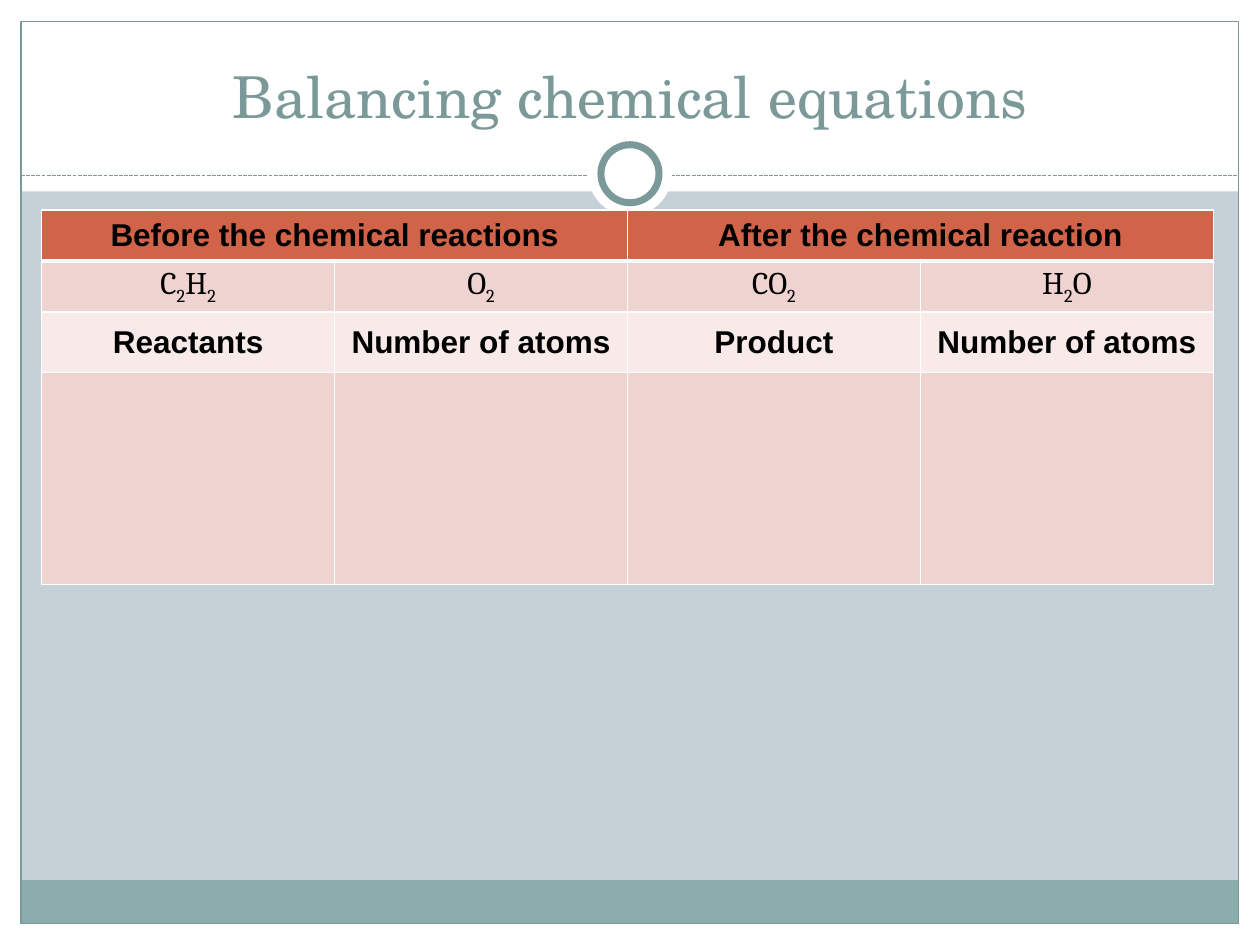
from lxml.etree import SubElement
from pptx import Presentation
from pptx.dml.color import RGBColor
from pptx.enum.dml import MSO_LINE as Dash
from pptx.enum.shapes import MSO_CONNECTOR as Conn, MSO_SHAPE as Shape
from pptx.enum.text import MSO_ANCHOR as Anchor, PP_ALIGN as Align
from pptx.oxml.ns import qn
from pptx.util import Pt

COLORS = {
    "back": "C5D1D7", "white": "FFFFFF", "black": "000000",
    "teal": "7C999A", "foot": "8CADAE",
    "head": "D16349", "pink": "EED3D0", "pale": "F7EAE9",
}
HEADS = ["Before the chemical reactions", "After the chemical reaction"]
MOLES = ["C2H2", "O2", "CO2", "H2O"]
LABELS = ["Reactants", "Number of atoms", "Product", "Number of atoms"]
HEIGHTS = [29.2, 29.2, 34.6, 121]
FILLS = ["head", "pink", "pale", "pink"]
COL = 167.4


def color(name):
    return RGBColor.from_string(COLORS[name])


def add_shape(slide, kind, box, fill=None, line=None, width=0.75):
    shape = slide.shapes.add_shape(kind, *map(Pt, box))
    shape.shadow.inherit = False
    if fill:
        shape.fill.solid()
        shape.fill.fore_color.rgb = color(fill)
    else:
        shape.fill.background()
    if line:
        shape.line.color.rgb = color(line)
        shape.line.width = Pt(width)
    else:
        shape.line.fill.background()


def add_rule(slide, left, right, top):
    rule = slide.shapes.add_connector(
        Conn.STRAIGHT, Pt(left), Pt(top), Pt(right), Pt(top))
    rule.line.color.rgb = color("teal")
    rule.line.width = Pt(0.75)
    rule.line.dash_style = Dash.SQUARE_DOT
    SubElement(rule._element.spPr, qn("a:effectLst"))


def style(run, font, size, name, bold=False):
    run.font.name = font
    run.font.size = Pt(size)
    run.font.bold = bold
    run.font.color.rgb = color(name)


def add_title(slide, text):
    box = slide.shapes.add_textbox(Pt(24), Pt(18), Pt(672), Pt(60))
    frame = box.text_frame
    frame.word_wrap = True
    frame.vertical_anchor = Anchor.BOTTOM
    frame.text = text
    para = frame.paragraphs[0]
    para.alignment = Align.CENTER
    style(para.runs[0], "TeX Gyre Schola", 33, "teal")


def set_cell(cell, fill, top, bottom):
    """Set borders, then the fill, which must follow them in the XML."""
    props = cell._tc.get_or_add_tcPr()
    for side, width in zip("LRTB", (1, 1, top, bottom)):
        line = SubElement(props, qn("a:ln" + side), w=str(Pt(width)))
        solid = SubElement(line, qn("a:solidFill"))
        SubElement(solid, qn("a:srgbClr"), val=COLORS["white"])
    cell.fill.solid()
    cell.fill.fore_color.rgb = color(fill)
    cell.vertical_anchor = Anchor.MIDDLE
    cell.margin_left = cell.margin_right = Pt(5)
    cell.margin_top = cell.margin_bottom = 0


def put_text(cell, text):
    cell.text_frame.text = text
    para = cell.text_frame.paragraphs[0]
    para.alignment = Align.CENTER
    style(para.runs[0], "Arial", 18, "black", True)


def put_mole(cell, text):
    """Write a formula with its digits as subscripts."""
    para = cell.text_frame.paragraphs[0]
    para.alignment = Align.CENTER
    for part in text.replace("2", " 2 ").split():
        run = para.add_run()
        run.text = part
        style(run, "Cambria", 18, "black")
        if part.isdigit():
            run._r.get_or_add_rPr().set("baseline", "-25000")


def add_grid(slide):
    cols = len(LABELS)
    frame = slide.shapes.add_table(
        len(HEIGHTS), cols, Pt(23.8), Pt(120), Pt(COL * cols), Pt(sum(HEIGHTS)))
    table = frame.table
    for col in table.columns:
        col.width = Pt(COL)
    for i, (height, fill) in enumerate(zip(HEIGHTS, FILLS)):
        table.rows[i].height = Pt(height)
        for j in range(cols):
            set_cell(table.cell(i, j), fill,
                     3 if i == 1 else 1, 3 if i == 0 else 1)
    for i, text in enumerate(HEADS):
        cell = table.cell(0, 2 * i)
        cell.merge(table.cell(0, 2 * i + 1))
        put_text(cell, text)
    for j, (mole, label) in enumerate(zip(MOLES, LABELS)):
        put_mole(table.cell(1, j), mole)
        put_text(table.cell(2, j), label)


def add_frame(slide):
    edges = [(0, 528, 720, 12), (0, 0, 720, 109.4),
             (0, 0, 12, 540), (708, 0, 12, 540)]
    for box in edges:
        add_shape(slide, Shape.RECTANGLE, box, "white")
    add_shape(slide, Shape.RECTANGLE, (11.8, 503, 695.6, 24.6), "foot")
    add_shape(slide, Shape.RECTANGLE, (12, 12.2, 695.6, 515.5), line="teal")
    add_rule(slide, 12, 708, 100.5)
    add_shape(slide, Shape.OVAL, (336, 75.3, 48, 48), "white")
    add_shape(slide, Shape.OVAL, (343.4, 82.7, 33.2, 33.2), "white", "teal", 4)


def main():
    deck = Presentation()
    deck.slide_width, deck.slide_height = Pt(720), Pt(540)
    slide = deck.slides.add_slide(deck.slide_layouts[6])
    slide.background.fill.solid()
    slide.background.fill.fore_color.rgb = color("back")
    add_frame(slide)
    add_title(slide, "Balancing chemical equations")
    add_grid(slide)
    deck.save("out.pptx")


if __name__ == "__main__":
    main()
